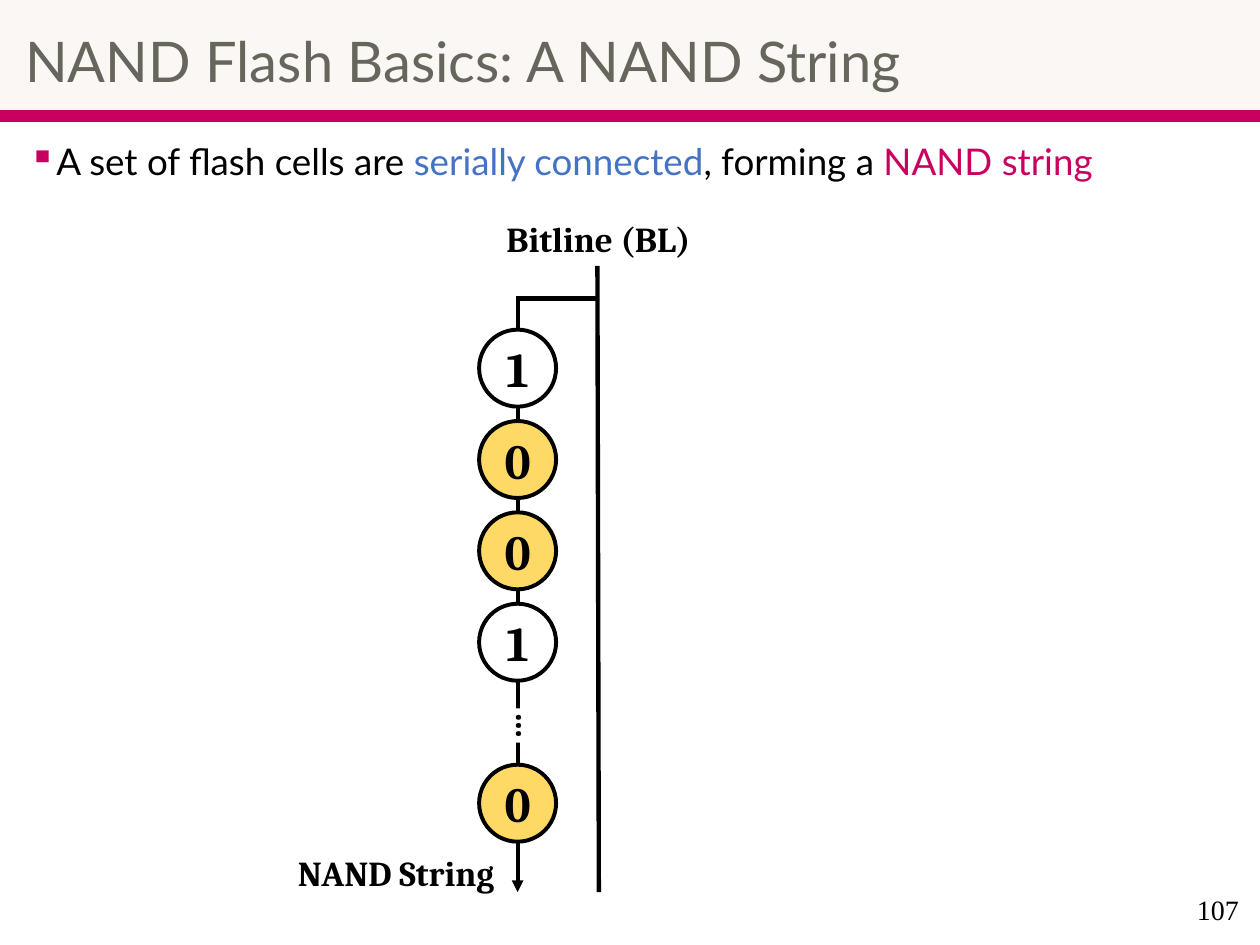
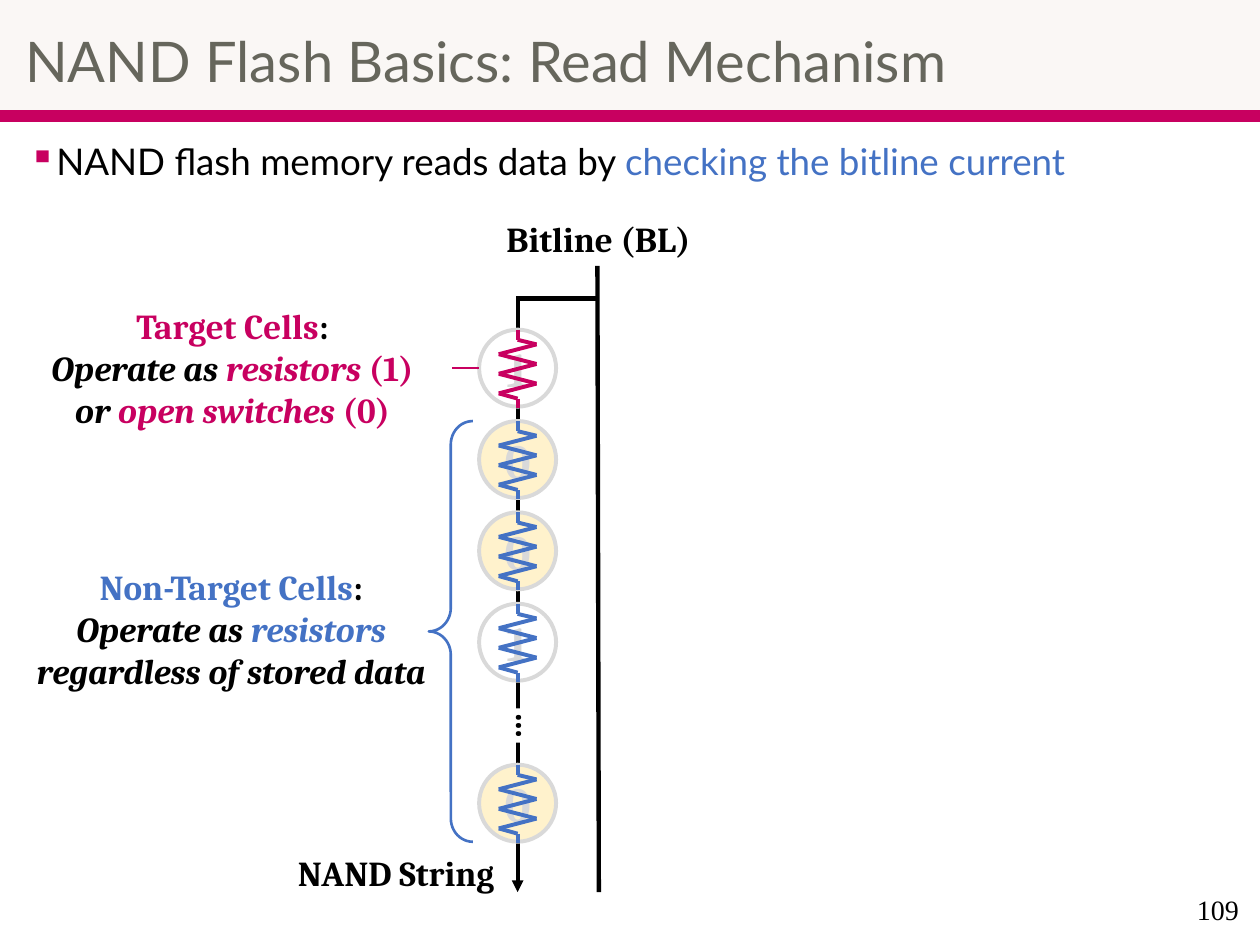
from itertools import pairwise

from lxml import etree
from pptx import Presentation
from pptx import util as u
from pptx.dml import color
from pptx.enum import shapes, text
from pptx.oxml import ns

Pt = u.Pt
THEME = {
    "ink": "000000", "white": "FFFFFF", "title": "66665C", "band": "FAF7F5",
    "accent": "C80060", "blue": "4472C4", "gold": "FFD966", "pale_gold": "FFF2CC",
    "grey": "D9D9D9",
    "title_font": {"name": "Lato", "size": Pt(32)},
    "body_font": {"name": "Lato", "size": Pt(21)},
    "cell_font": {"name": "Cambria", "size": Pt(28), "bold": True},
    "label_font": {"name": "Cambria", "size": Pt(20), "bold": True},
    "number_font": {"name": "Times New Roman", "size": Pt(16)},
}

SLIDES = [
    {
        "title": "NAND Flash Basics: A NAND String",
        "bullet": [("A set of flash cells are ", "ink"), ("serially connected", "blue"),
                   (", forming a ", "ink"), ("NAND string", "accent")],
        "number": "107",
        "read": False,
    },
    {
        "title": "NAND Flash Basics: Read Mechanism",
        "bullet": [("NAND flash memory reads data by ", "ink"),
                   ("checking the bitline current", "blue")],
        "number": "109",
        "read": True,
    },
]
TARGET_NOTE = [
    [("Target Cells", "accent"), (":", "ink")],
    [("Operate as ", "ink", True), ("resistors ", "accent", True), ("(1)", "accent")],
    [("or ", "ink", True), ("open switches ", "accent", True), ("(0)", "accent")],
]
NON_TARGET_NOTE = [
    [("Non-Target Cells", "blue"), (":", "ink")],
    [("Operate as ", "ink", True), ("resistors", "blue", True)],
    [("regardless of stored data", "ink", True)],
]
BITS = "10010"
TARGET = 0

STRING_X = 295.8
CELL_SIZE = 44
CELL_LEFT = STRING_X - CELL_SIZE / 2
CELL_TOPS = [188.4 + 52.2 * step for step in range(4)] + [437]
STRING_TOP, STRING_BOTTOM = 170.5, 509.8
BITLINE_X = 341.8
ZIGZAG = ([(0, 0), (0, 5.8)]
          + [(10.8 * (-1) ** step, 8.4 + 5.6 * step) for step in range(6)]
          + [(0, 39.4), (0, 44.6)])


def rgb(key):
    return color.RGBColor.from_string(THEME[key])


def assign(target, values):
    for name, value in values.items():
        setattr(target, name, value)


def paint(shape, fill, line=None, width=1):
    shape.shadow.inherit = False
    if fill:
        shape.fill.solid()
        shape.fill.fore_color.rgb = rgb(fill)
    else:
        shape.fill.background()
    if line:
        shape.line.color.rgb = rgb(line)
        shape.line.width = Pt(width)
    else:
        shape.line.fill.background()


def write(shape, lines, font, align="CENTER", anchor="MIDDLE", insets=(0, 0, 0, 0)):
    frame = shape.text_frame
    sides = ("margin_left", "margin_top", "margin_right", "margin_bottom")
    assign(frame, {"word_wrap": True, "auto_size": text.MSO_AUTO_SIZE.NONE,
                   "vertical_anchor": getattr(text.MSO_ANCHOR, anchor),
                   **{side: Pt(inset) for side, inset in zip(sides, insets)}})
    for index, spans in enumerate(lines):
        para = frame.add_paragraph() if index else frame.paragraphs[0]
        para.alignment = getattr(text.PP_ALIGN, align)
        for words, ink, *italic in spans:
            span = para.add_run()
            span.text = words
            assign(span.font, {**THEME[font], "italic": bool(italic)})
            span.font.color.rgb = rgb(ink)
    return frame.paragraphs[0]


def add_text(page, at, lines, font, **layout):
    box = page.shapes.add_textbox(*map(Pt, at))
    return write(box, lines, font, **layout)


def add_shape(page, kind, at, fill, line=None, width=1):
    shape = page.shapes.add_shape(getattr(shapes.MSO_SHAPE, kind), *map(Pt, at))
    paint(shape, fill, line, width)
    return shape


def add_line(holder, start, end, ink, width, arrow=False):
    line = holder.shapes.add_connector(shapes.MSO_CONNECTOR.STRAIGHT, *map(Pt, start + end))
    line.line.color.rgb = rgb(ink)
    line.line.width = Pt(width)
    if arrow:
        etree.SubElement(line.line._get_or_add_ln(), ns.qn("a:tailEnd"), type="triangle")
    etree.SubElement(line._element.spPr, ns.qn("a:effectLst"))


def add_bullet(para):
    properties = para._p.get_or_add_pPr()
    properties.set("marL", str(Pt(13.5)))
    properties.set("indent", str(-Pt(13.5)))
    tint = etree.SubElement(properties, ns.qn("a:buClr"))
    etree.SubElement(tint, ns.qn("a:srgbClr"), val=THEME["accent"])
    etree.SubElement(properties, ns.qn("a:buChar"), char="▪")


def add_frame(deck, content):
    page = deck.slides.add_slide(deck.slide_layouts[5])
    add_shape(page, "RECTANGLE", (0, 63.4, 720, 5.8), "accent", "accent")
    title = page.shapes.title
    assign(title, dict(zip(("left", "top", "width", "height"), map(Pt, (0, 0, 720, 62.6)))))
    title.fill.solid()
    title.fill.fore_color.rgb = rgb("band")
    title.line.color.rgb = rgb("band")
    title.line.width = Pt(0.75)
    heading = write(title, [[(content["title"], "title")]], "title_font",
                    align="LEFT", insets=(14.4, 14.4, 7.2, 3.6))
    bullet = add_text(page, (9.4, 78.5, 701.3, 431.3), [content["bullet"]], "body_font",
                      align="LEFT", anchor="TOP", insets=(7.2, 3.6, 7.2, 3.6))
    add_bullet(bullet)
    for para in (heading, bullet):
        assign(para, {"line_spacing": 0.9, "space_before": Pt(0)})
    add_text(page, (547.2, 501.8, 167.8, 36), [[(content["number"], "ink")]], "number_font",
             align="RIGHT", insets=(7.2, 3.6, 7.2, 3.6))
    return page


def add_string(page, faded):
    add_line(page, (STRING_X, STRING_TOP - 0.6), (STRING_X, STRING_BOTTOM), "ink", 2.25, arrow=True)
    ink, gold = ("grey", "pale_gold") if faded else ("ink", "gold")
    for bit, top in zip(BITS, CELL_TOPS):
        cell = add_shape(page, "OVAL", (CELL_LEFT, top, CELL_SIZE, CELL_SIZE),
                         gold if bit == "0" else "white", ink, 2.25)
        write(cell, [[(bit, ink)]], "cell_font")
    add_line(page, (STRING_X - 0.8, STRING_TOP), (BITLINE_X, STRING_TOP), "ink", 2.5)
    add_line(page, (BITLINE_X + 0.4, STRING_BOTTOM), (BITLINE_X - 0.4, 152), "ink", 2.5)
    gap = add_shape(page, "RECTANGLE", (280, 402.4, 19.6, 24.4), "white")
    gap.rotation = 270
    write(gap, [[("…", "ink")]], "label_font")
    for words, left, top in (("Bitline (BL)", 224.4, 124.1), ("NAND String", 108.8, 486.6)):
        add_text(page, (left, top, 235.2, 24.2), [[(words, "ink")]], "label_font")


def add_read_mechanism(page):
    for index, top in enumerate(CELL_TOPS):
        resistor = page.shapes.add_group_shape()
        points = [(STRING_X + across, top + down) for across, down in ZIGZAG]
        for start, end in pairwise(points):
            add_line(resistor, start, end, "accent" if index == TARGET else "blue", 2.25)
    middle = CELL_TOPS[TARGET] + CELL_SIZE / 2
    add_line(page, (258.5, middle), (CELL_LEFT, middle), "accent", 1.5)
    first = CELL_TOPS[TARGET + 1]
    brace = add_shape(page, "LEFT_BRACE",
                      (245, first, 25.2, CELL_TOPS[-1] + CELL_SIZE - first), None, "blue", 1.5)
    brace.adjustments[0] = 0.53
    brace.adjustments[1] = 0.5
    add_text(page, (7.2, 173.9, 251.3, 72.7), TARGET_NOTE, "label_font")
    add_text(page, (2.9, 322.9, 258.5, 72.7), NON_TARGET_NOTE, "label_font")


def main():
    deck = Presentation()
    assign(deck, {"slide_width": Pt(720), "slide_height": Pt(540)})
    for content in SLIDES:
        page = add_frame(deck, content)
        add_string(page, faded=content["read"])
        if content["read"]:
            add_read_mechanism(page)
    deck.save("out.pptx")


if __name__ == "__main__":
    main()
